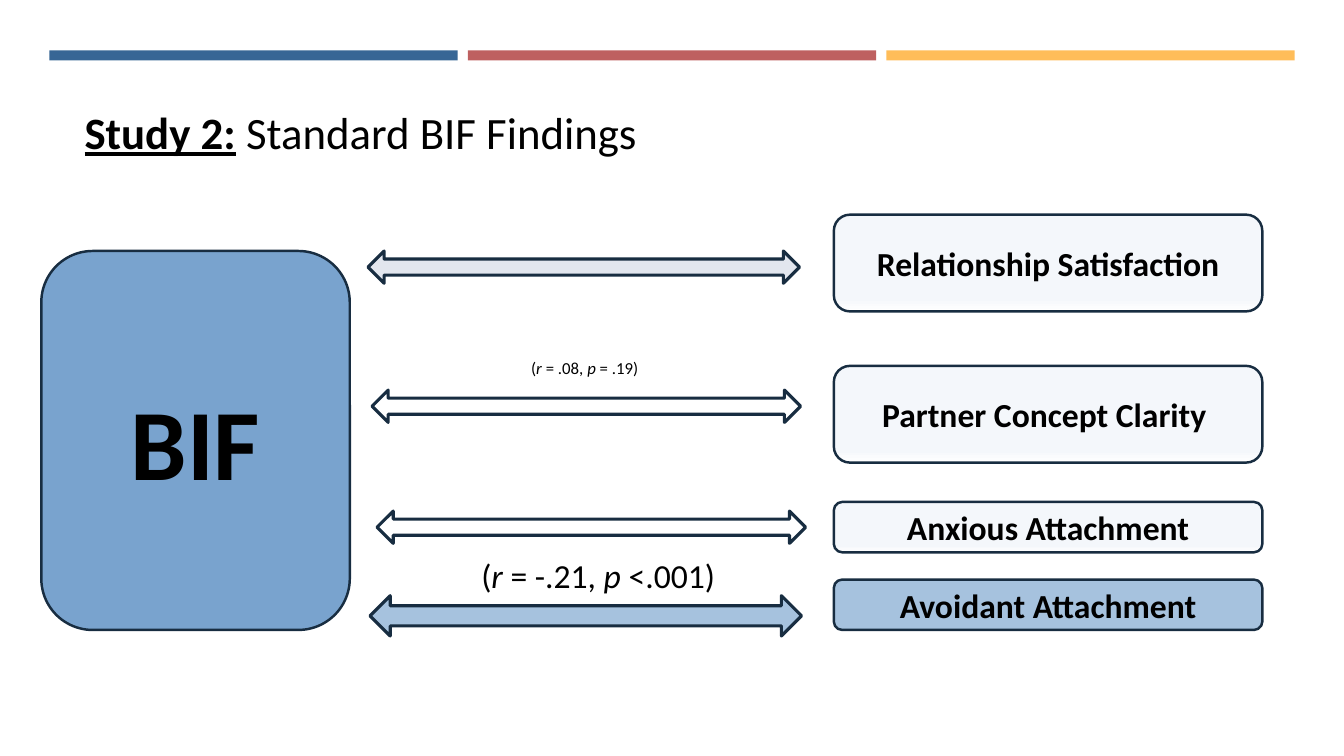
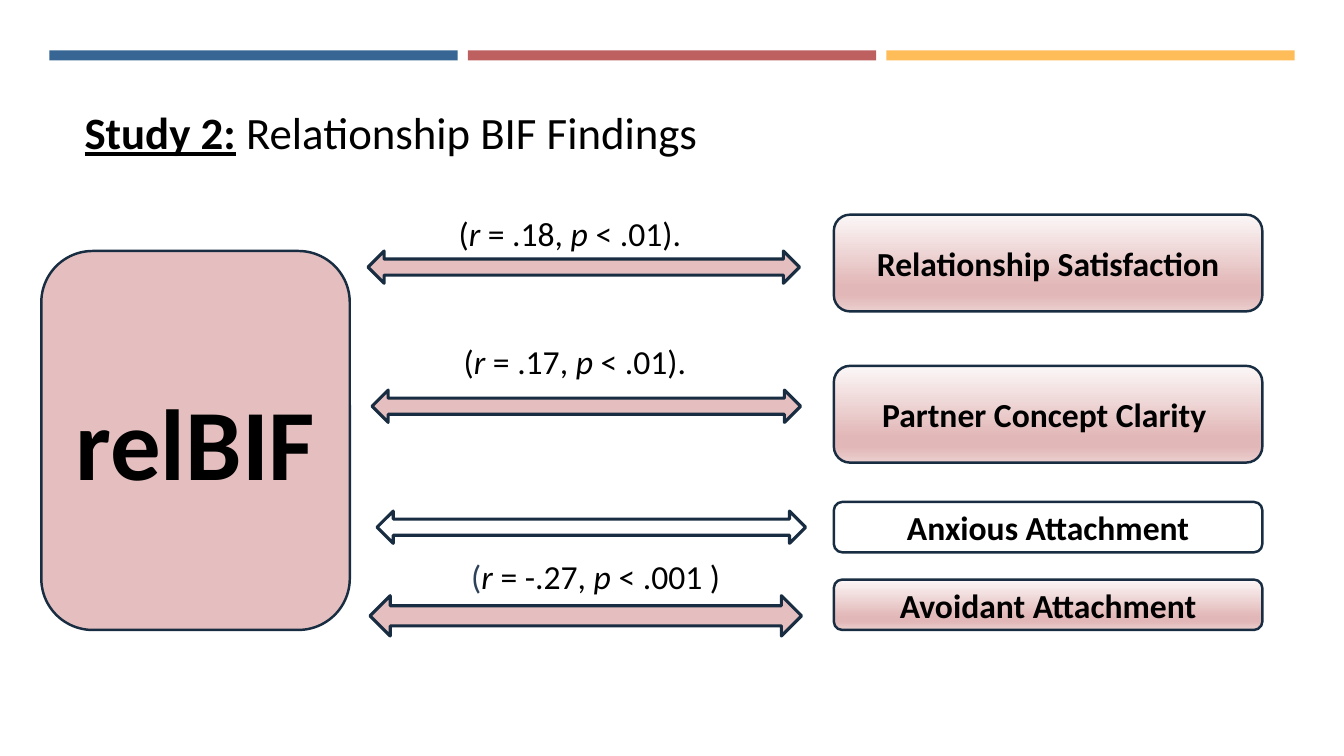
from lxml.etree import SubElement
from pptx import Presentation
from pptx.dml.color import RGBColor
from pptx.enum.shapes import MSO_SHAPE
from pptx.enum.text import MSO_ANCHOR, PP_ALIGN
from pptx.oxml.ns import qn
from pptx.util import Inches, Pt

FONT = "Calibri"
COLORS = {
    "navy": "376695", "red": "BE6060", "amber": "FFBD59",
    "outline": "182D41", "text": "000000", "slate": "2E415A",
    "blue": "79A3CE", "light_blue": "A6C2DE", "rose": "E5BFBF",
}
# Vertical gradients: (position in percent, colour)
PALE = [(87, "F4F7FB"), (100, "FFFFFF")]
MIST = [(0, "9AADCB"), (19, "E2E6EE")]
BLUSH = [(0, "FCF7F7"), (74, "E2B7B7"), (83, "E2B7B7"), (100, "EBCFCF")]

OUTCOMES = [  # label, top, height
    ("Relationship Satisfaction", 2.13, 0.96),
    ("Partner Concept Clarity ", 3.63, 0.96),
    ("Anxious Attachment", 4.98, 0.5),
    ("Avoidant Attachment", 5.75, 0.5),
]
ARROWS = [  # left, top, width, height
    (3.65, 2.49, 4.28, 0.32),
    (3.69, 3.87, 4.25, 0.32),
    (3.74, 5.07, 4.25, 0.32),
    (3.67, 5.91, 4.28, 0.4),
]
# Statistics: lead, text with *italics*, left, top, width, size
STUDIES = [
    {
        "title": "Standard BIF Findings", "predictor": "BIF", "fill": "blue",
        "boxes": [PALE, PALE, PALE, "light_blue"],
        "arrows": [MIST, None, None, "light_blue"],
        "stats": [("", "(*r* = .08, *p* = .19)", 5.17, 3.5, 3, 12),
                  (" ", "(*r* = -.21, *p *<.001)", 4.6, 5.46, 6.67, 24)],
    },
    {
        "title": "Relationship BIF Findings", "predictor": "relBIF", "fill": "rose",
        "boxes": [BLUSH, BLUSH, None, BLUSH],
        "arrows": ["rose", "rose", None, "rose"],
        "stats": [("", "(*r* = .18, *p* < .01).", 4.45, 2.06, 6.67, 24),
                  ("", "(*r* = .17, *p* < .01).", 4.5, 3.33, 6.67, 24),
                  (" (", "*r *= -.27, *p* < .001 )", 4.5, 5.47, 6.67, 24)],
    },
]


def rgb(name):
    return RGBColor.from_string(COLORS[name])


def set_fill(sp, fill):
    """Fill with a colour name, a list of gradient stops, or nothing (None)."""
    if fill is None:
        sp.fill.background()
    elif isinstance(fill, str):
        sp.fill.solid()
        sp.fill.fore_color.rgb = rgb(fill)
    else:
        sp.fill.gradient()
        sp.fill.gradient_angle = 270
        stops = sp._element.spPr.find(qn("a:gradFill")).find(qn("a:gsLst"))
        for stop in list(stops):
            stops.remove(stop)
        for position, color in fill:
            gs = SubElement(stops, qn("a:gs"), pos=str(position * 1000))
            SubElement(gs, qn("a:srgbClr"), val=color)


def add_shape(s, kind, box, fill, line_width=None):
    sp = s.shapes.add_shape(kind, *map(Inches, box))
    sp.shadow.inherit = False
    set_fill(sp, fill)
    if line_width:
        sp.line.color.rgb = rgb("outline")
        sp.line.width = Pt(line_width)
    else:
        sp.line.fill.background()
    return sp


def set_font(p, size):
    p.font.name = FONT
    p.font.size = Pt(size)
    p.font.color.rgb = rgb("text")


def add_run(p, text):
    r = p.add_run()
    r.text = text
    return r


def add_box(s, text, box, fill, size):
    tf = add_shape(s, MSO_SHAPE.ROUNDED_RECTANGLE, box, fill, 1.75).text_frame
    tf.vertical_anchor = MSO_ANCHOR.MIDDLE
    p = tf.paragraphs[0]
    p.text = text
    p.alignment = PP_ALIGN.CENTER
    set_font(p, size)
    p.font.bold = True


def add_text(s, box, size):
    """Add an empty text box and return its styled paragraph."""
    tf = s.shapes.add_textbox(*map(Inches, box)).text_frame
    tf.word_wrap = True
    p = tf.paragraphs[0]
    set_font(p, size)
    return p


def add_stat(s, lead, text, left, top, width, size):
    """Add a statistic: a slate lead, then text whose *starred* parts are italic."""
    p = add_text(s, (left, top, width, 0.5), size)
    if lead:
        add_run(p, lead).font.color.rgb = rgb("slate")
    for i, part in enumerate(text.split("*")):
        if part:
            add_run(p, part).font.italic = i % 2 == 1


def add_frame(s, title):
    """Add the three colour bands and the title."""
    for i, color in enumerate(("navy", "red", "amber")):
        add_shape(s, MSO_SHAPE.RECTANGLE, (0.49 + 4.15 * i, 0.5, 4.05, 0.1), color)
    p = add_text(s, (0.74, 0.99, 7.12, 0.64), 32)
    r = add_run(p, "Study 2:")
    r.font.bold = r.font.underline = True
    add_run(p, " " + title)


def add_study(prs, study):
    s = prs.slides.add_slide(prs.slide_layouts[6])
    add_frame(s, study["title"])
    add_box(s, study["predictor"], (0.41, 2.49, 3.06, 3.76), study["fill"], 72)
    for (label, top, height), fill in zip(OUTCOMES, study["boxes"]):
        add_box(s, label, (8.27, top, 4.25, height), fill, 24)
    for box, fill in zip(ARROWS, study["arrows"]):
        add_shape(s, MSO_SHAPE.LEFT_RIGHT_ARROW, box, fill, 2.25)
    for stat in study["stats"]:
        add_stat(s, *stat)


def main():
    prs = Presentation()
    prs.slide_width, prs.slide_height = Inches(13.33), Inches(7.5)
    for study in STUDIES:
        add_study(prs, study)
    prs.save("out.pptx")


if __name__ == "__main__":
    main()
